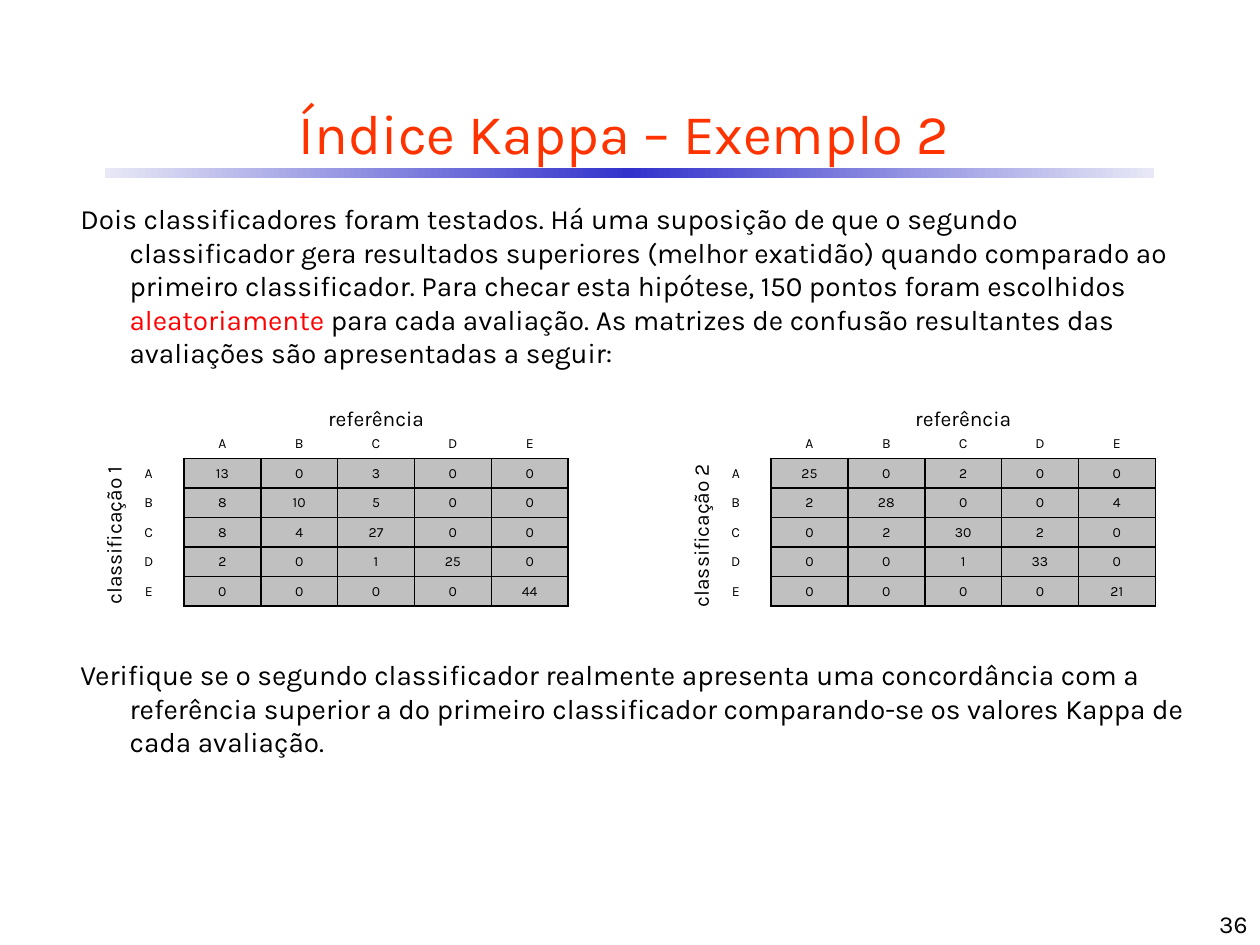
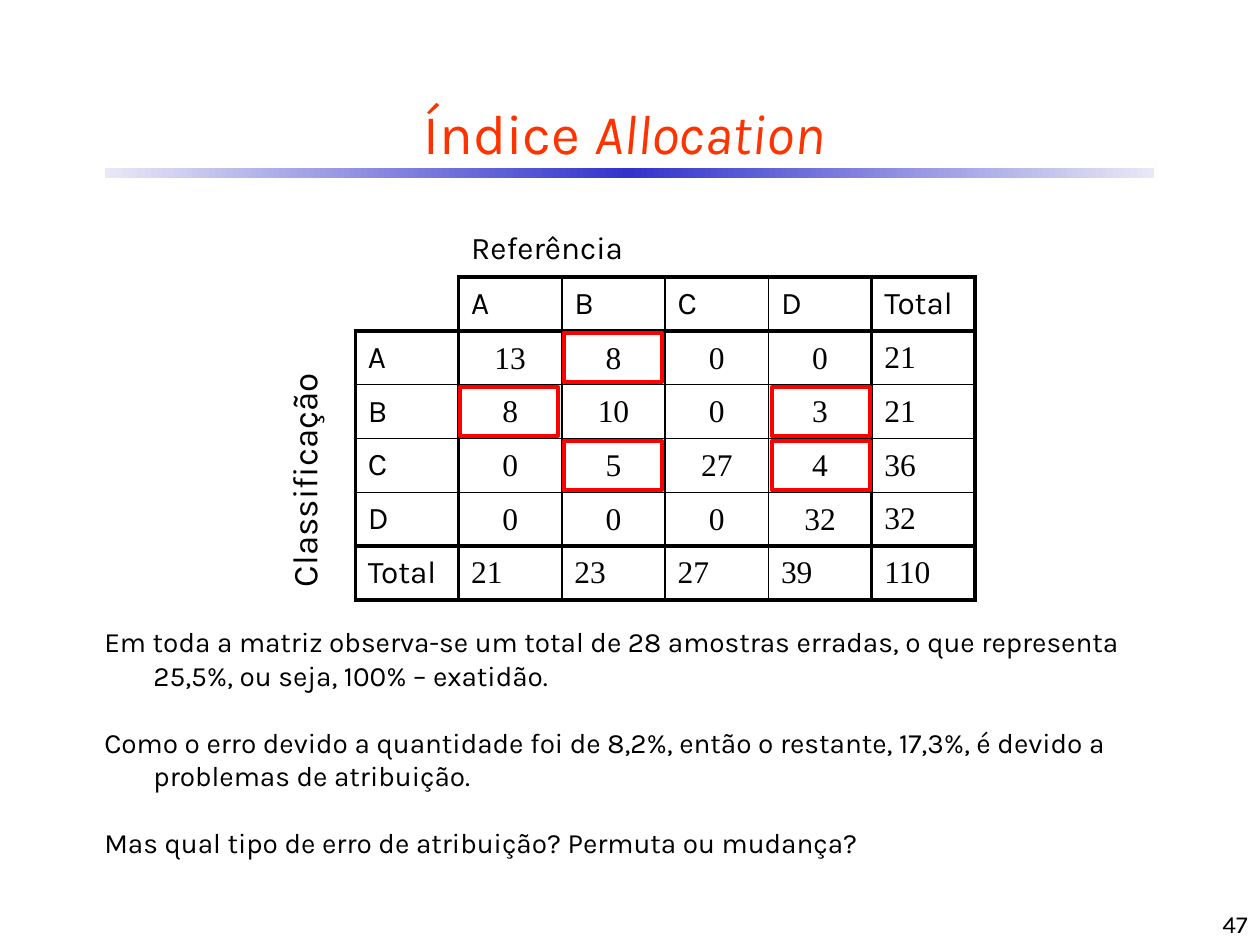
from copy import deepcopy

from pptx import Presentation
from pptx.dml.color import RGBColor
from pptx.enum.shapes import MSO_SHAPE
from pptx.enum.text import MSO_ANCHOR as ANCHOR, PP_ALIGN as ALIGN
from pptx.oxml import parse_xml
from pptx.oxml.ns import nsdecls, qn
from pptx.util import Inches, Pt

rgb = RGBColor.from_string
BLACK, RED, TITLE, GREY = "000000", "FF0000", "FF3300", "C0C0C0"
BAR_STOPS = [(0, "E8E8F6"), (0.5, "3333CC"), (1, "E8E8F6")]
SANS, SERIF = "Karla", "Times New Roman"
NO_STYLE = "{2D5ABB26-0587-4C30-8999-92F81FD0307C}"


def write(tf, runs, size, align=ALIGN.LEFT, font=SANS):
    """Add one paragraph made of (text, colour, italic) runs, or of one plain text."""
    p = tf.paragraphs[0] if not tf.text else tf.add_paragraph()
    p.alignment = align
    for text, color, italic in [(runs, BLACK, False)] if isinstance(runs, str) else runs:
        r = p.add_run()
        r.text = text
        r.font.name, r.font.size = font, Pt(size)
        r.font.italic = italic
        r.font.color.rgb = rgb(color)
    return p


def add_matrix(s, left, top, widths, heights, lines, skip=None):
    """Add a plain table; grid line n has the width lines[n], from line 1 on."""
    frame = s.shapes.add_table(len(heights), len(widths), Inches(left), Inches(top),
                               Inches(sum(widths)), Inches(sum(heights)))
    tbl = frame.table
    tbl.first_row = tbl.horz_banding = False
    frame._element.find(".//" + qn("a:tableStyleId")).text = NO_STYLE
    for col, width in zip(tbl.columns, widths):
        col.width = Inches(width)
    for row, height in zip(tbl.rows, heights):
        row.height = Inches(height)
    for i in range(len(heights)):
        for j in range(len(widths)):
            cell = tbl.cell(i, j)
            if i and j and (i, j) != skip:
                tc_pr = cell._tc.get_or_add_tcPr()
                for side, n in (("L", j), ("R", j + 1), ("T", i), ("B", i + 1)):
                    tc_pr.append(parse_xml(
                        f'<a:ln{side} {nsdecls("a")} w="{Pt(lines[n])}"><a:solidFill>'
                        f'<a:srgbClr val="{BLACK}"/></a:solidFill></a:ln{side}>'))
            cell.fill.background()
    return tbl


prs = Presentation()
prs.slide_width, prs.slide_height = Inches(10), Inches(7.5)

# Title, gradient bar and page number of both slides
titles = [
    ([("Índice Kappa – Exemplo 2", TITLE, False)], "36"),
    ([("Índice ", TITLE, False), ("Allocation", TITLE, True)], "47"),
]
for title, number in titles:
    s = prs.slides.add_slide(prs.slide_layouts[6])
    bar = s.shapes.add_shape(MSO_SHAPE.RECTANGLE, Inches(0.83), Inches(1.33),
                             Inches(8.33), Inches(0.08))
    bar.shadow.inherit = False
    bar.line.fill.background()
    bar.fill.gradient()
    bar.fill.gradient_angle = 0
    stops = bar._element.find(".//" + qn("a:gsLst"))
    stops.append(deepcopy(stops[0]))
    for stop, (position, color) in zip(bar.fill.gradient_stops, BAR_STOPS):
        stop.position = position
        stop.color.rgb = rgb(color)
    for box, anchor, text, size, align in [
        ((0.33, 0.67, 9.25, 0.75), ANCHOR.MIDDLE, title, 32, ALIGN.CENTER),
        ((7.92, 7, 2.08, 0.5), ANCHOR.BOTTOM, number, 14, ALIGN.RIGHT),
    ]:
        tf = s.shapes.add_textbox(*map(Inches, box)).text_frame
        tf.word_wrap = True
        tf.vertical_anchor = anchor
        write(tf, text, size, align)
kappa, allocation = prs.slides

# Body texts with hanging indent
bodies = [
    (kappa, (0.54, 1.55, 8.98, 1.45), [[
        ("Dois classificadores foram testados. Há uma suposição de que o segundo "
         "classificador gera resultados superiores (melhor exatidão) quando comparado ao "
         "primeiro classificador. Para checar esta hipótese, 150 pontos foram escolhidos ",
         BLACK, False),
        ("aleatoriamente", RED, False),
        (" para cada avaliação. As matrizes de confusão resultantes das avaliações são "
         "apresentadas a seguir:", BLACK, False)]]),
    (kappa, (0.54, 5.17, 8.98, 0.91), [
        "Verifique se o segundo classificador realmente apresenta uma concordância com a "
        "referência superior a do primeiro classificador comparando-se os valores Kappa de "
        "cada avaliação."]),
    (allocation, (0.73, 4.91, 8.5, 1.99), [
        "Em toda a matriz observa-se um total de 28 amostras erradas, o que representa "
        "25,5%, ou seja, 100% – exatidão.",
        "Como o erro devido a quantidade foi de 8,2%, então o restante, 17,3%, é devido a "
        "problemas de atribuição.",
        "Mas qual tipo de erro de atribuição? Permuta ou mudança?"]),
]
for s, box, paragraphs in bodies:
    tf = s.shapes.add_textbox(*map(Inches, box)).text_frame
    tf.word_wrap = True
    for n, runs in enumerate(paragraphs):
        p = write(tf, runs, 16)
        p.space_before = Pt(19 if n else 0)
        p_pr = p._p.get_or_add_pPr()
        p_pr.set("marL", str(Inches(0.39)))
        p_pr.set("indent", str(-Inches(0.39)))

# Slide 1: the two confusion matrices with their axis labels
classes = "ABCDE"
matrices = [
    (0.9, "classificação 1", [[13, 0, 3, 0, 0], [8, 10, 5, 0, 0], [8, 4, 27, 0, 0],
                              [2, 0, 1, 25, 0], [0, 0, 0, 0, 44]]),
    (5.56, "classificação 2", [[25, 0, 2, 0, 0], [2, 28, 0, 0, 4], [0, 2, 30, 2, 0],
                               [0, 0, 1, 33, 0], [0, 0, 0, 0, 21]]),
]
for left, label, counts in matrices:
    tbl = add_matrix(kappa, left, 3.14, [0.56] + [0.61] * 5, [0.5] + [0.234] * 5, [1] * 7)
    rows = [["", *classes]] + [[name, *row] for name, row in zip(classes, counts)]
    for i, row in enumerate(rows):
        for j, value in enumerate(row):
            cell = tbl.cell(i, j)
            cell.vertical_anchor = ANCHOR.BOTTOM
            write(cell.text_frame, str(value), 8, ALIGN.CENTER)
            if i and j:
                cell.fill.solid()
                cell.fill.fore_color.rgb = rgb(GREY)
    for text, box, angle in [
        ("referência", (left + 0.55, 3.17, 3.07, 0.3), 0),
        (label, (left - 0.75, 4.1, 1.5, 0.3), 270),
    ]:
        sp = kappa.shapes.add_textbox(*map(Inches, box))
        sp.rotation = angle
        sp.text_frame.word_wrap = True
        write(sp.text_frame, text, 12, ALIGN.CENTER)

# Slide 2: matrix with totals
thick = 2.25
tbl = add_matrix(allocation, 2.33, 1.75, [0.49] + [0.82] * 6, [0.45] + [0.427] * 6,
                 [0, thick, thick, 1, 1, 1, thick, thick], skip=(1, 1))
rows = [
    ["", "A", "B", "C", "D", "Total"],
    ["A", 13, 8, 0, 0, 21],
    ["B", 8, 10, 0, 3, 21],
    ["C", 0, 5, 27, 4, 36],
    ["D", 0, 0, 0, 32, 32],
    ["Total", 21, 23, 27, 39, 110],
]
for i, row in enumerate(rows, 1):
    for j, value in enumerate(row, 1):
        cell = tbl.cell(i, j)
        cell.vertical_anchor = ANCHOR.MIDDLE
        inner = 2 <= i <= 5 and 2 <= j <= 5
        if inner:
            cell.margin_left = cell.margin_right = cell.margin_top = Inches(0.01)
            cell.margin_bottom = 0
        write(cell.text_frame, str(value), 18, ALIGN.CENTER if inner else ALIGN.LEFT,
              SANS if isinstance(value, str) else SERIF)

# Merged axis labels
reference, classification = tbl.cell(0, 2), tbl.cell(2, 0)
reference.merge(tbl.cell(0, 6))
classification.merge(tbl.cell(6, 0))
reference.vertical_anchor = classification.vertical_anchor = ANCHOR.MIDDLE
write(reference.text_frame, "Referência", 18)
classification._tc.get_or_add_tcPr().set("vert", "vert270")
write(classification.text_frame, "Classificação", 20).line_spacing = Pt(15)

# Red frames around the allocation errors (row, column)
for i, j in [(0, 1), (1, 0), (1, 3), (2, 1), (2, 3)]:
    sp = allocation.shapes.add_shape(MSO_SHAPE.RECTANGLE, Inches(3.65 + 0.825 * j),
                                     Inches(2.64 + 0.43 * i), Inches(0.78), Inches(0.39))
    sp.shadow.inherit = False
    sp.fill.background()
    sp.line.color.rgb = rgb(RED)
    sp.line.width = Pt(2.25)

prs.save("out.pptx")
